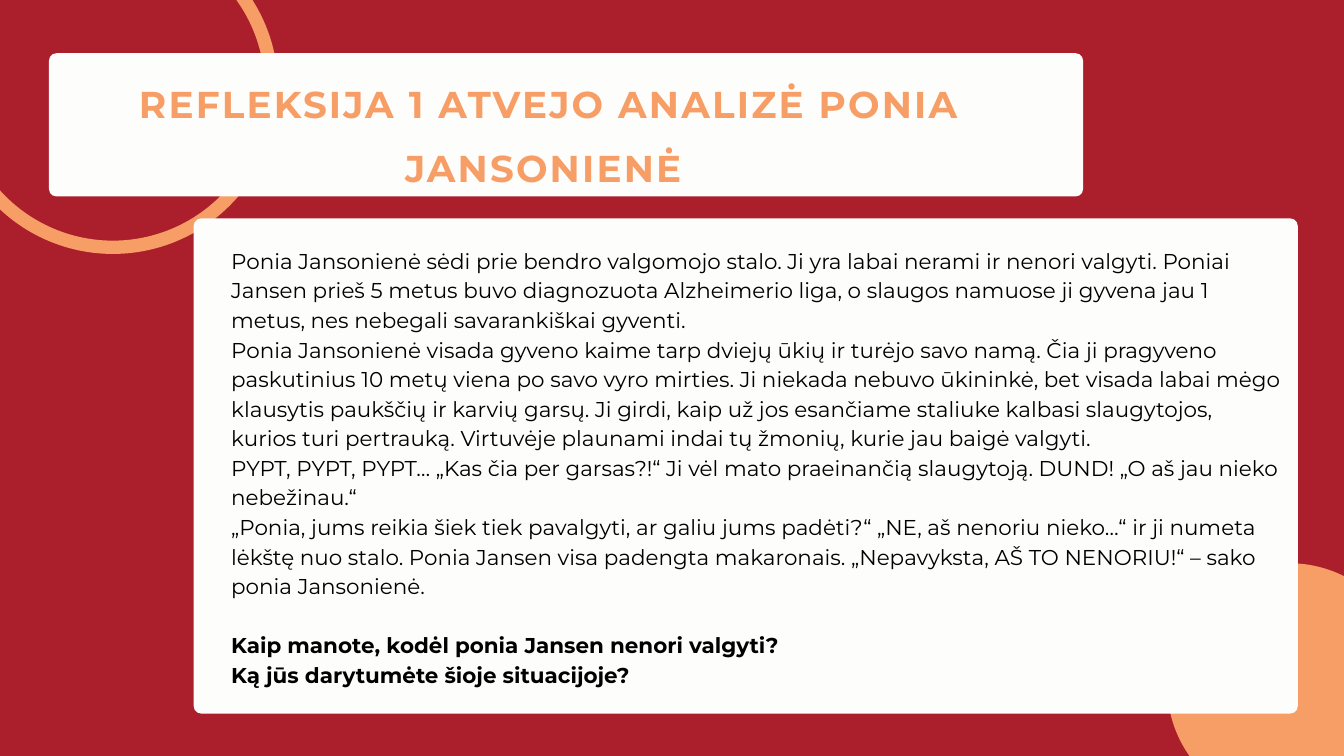
from lxml import etree
from pptx import Presentation
from pptx.dml.color import RGBColor
from pptx.enum.shapes import MSO_SHAPE as Shape
from pptx.enum.text import MSO_ANCHOR as Anchor, MSO_AUTO_SIZE as AutoSize, PP_ALIGN as Align
from pptx.oxml.ns import qn
from pptx.util import Pt

RED, ORANGE, CREAM, BLACK = "AB1F2C", "F79E67", "FDFDFB", "000000"


def paint(target, color):
    if hasattr(target, "solid"):
        target.solid()
        target = target.fore_color
    target.rgb = RGBColor.from_string(color)


class SlideBuilder:
    font = "Montserrat"

    def __init__(self, slide, background):
        self.slide = slide
        paint(slide.background.fill, background)

    def shape(self, kind, box, fill=None):
        shape = self.slide.shapes.add_shape(kind, *map(Pt, box))
        shape.shadow.inherit = False
        if fill:
            paint(shape.fill, fill)
        else:
            shape.fill.background()
        shape.line.fill.background()
        return shape

    def disc(self, box, color):
        self.shape(Shape.OVAL, box, color)

    def ring(self, box, color, width):
        ring = self.shape(Shape.OVAL, box)
        paint(ring.line.fill, color)
        ring.line.width = Pt(width)

    def card(self, box, color, radius=8):
        card = self.shape(Shape.ROUNDED_RECTANGLE, box, color)
        card.adjustments[0] = radius / min(box[2:])

    def frame(self, placeholder, box):
        self.slide.shapes._spTree.append(placeholder._element)
        placeholder.left, placeholder.top, placeholder.width, placeholder.height = map(Pt, box)
        frame = placeholder.text_frame
        frame.margin_left = frame.margin_right = frame.margin_top = frame.margin_bottom = 0
        frame.word_wrap = True
        frame.auto_size = AutoSize.NONE
        frame.vertical_anchor = Anchor.TOP
        return frame

    def add_text(self, paragraph, text, size, color, leading, bold=False,
                 align=Align.LEFT, before=0, spacing=0):
        properties = paragraph._p.get_or_add_pPr()
        properties.set("marL", "0")
        properties.set("indent", "0")
        etree.SubElement(properties, qn("a:buNone"))
        paragraph.alignment = align
        paragraph.line_spacing = Pt(leading)
        paragraph.space_before = Pt(before)
        run = paragraph.add_run()
        run.text = text
        run.font.name = self.font
        run.font.size = Pt(size)
        run.font.bold = bold
        paint(run.font.color, color)
        if spacing:
            run._r.get_or_add_rPr().set("spc", str(round(spacing * 100)))

    def title(self, text, box):
        frame = self.frame(self.slide.shapes.title, box)
        self.add_text(frame.paragraphs[0], text, 40, ORANGE, 68, True, Align.CENTER, spacing=2.4)

    def body(self, story, questions, box, leading=31.7):
        frame = self.frame(self.slide.placeholders[1], box)
        for index, text in enumerate(story + questions):
            paragraph = frame.add_paragraph() if index else frame.paragraphs[0]
            self.add_text(paragraph, text, 23, BLACK, leading, bold=index >= len(story),
                          before=leading if index == len(story) else 0)


STORY = [
    "Ponia Jansonienė sėdi prie bendro valgomojo stalo. Ji yra labai nerami ir nenori valgyti. "
    "Poniai Jansen prieš 5 metus buvo diagnozuota Alzheimerio liga, o slaugos namuose ji gyvena "
    "jau 1 metus, nes nebegali savarankiškai gyventi.",
    "Ponia Jansonienė visada gyveno kaime tarp dviejų ūkių ir turėjo savo namą. Čia ji pragyveno "
    "paskutinius 10 metų viena po savo vyro mirties. Ji niekada nebuvo ūkininkė, bet visada labai "
    "mėgo klausytis paukščių ir karvių garsų. Ji girdi, kaip už jos esančiame staliuke kalbasi "
    "slaugytojos, kurios turi pertrauką. Virtuvėje plaunami indai tų žmonių, kurie jau baigė valgyti.",
    "PYPT, PYPT, PYPT… „Kas čia per garsas?!“ Ji vėl mato praeinančią slaugytoją. DUND! "
    "„O aš jau nieko nebežinau.“",
    "„Ponia, jums reikia šiek tiek pavalgyti, ar galiu jums padėti?“ „NE, aš nenoriu nieko…“ "
    "ir ji numeta lėkštę nuo stalo. Ponia Jansen visa padengta makaronais. „Nepavyksta, "
    "AŠ TO NENORIU!“ – sako ponia Jansonienė.",
]
QUESTIONS = [
    "Kaip manote, kodėl ponia Jansen nenori valgyti?",
    "Ką jūs darytumėte šioje situacijoje?",
]


def main():
    deck = Presentation()
    deck.slide_width, deck.slide_height = Pt(1440), Pt(810)
    builder = SlideBuilder(deck.slides.add_slide(deck.slide_layouts[1]), RED)
    builder.ring((-49, -75, 340, 340), ORANGE, 14.25)
    builder.disc((1250.5, 603.5, 262, 262), ORANGE)
    builder.card((207.5, 234, 1183, 530.5), CREAM)
    builder.card((52.5, 57, 1108, 153.5), CREAM)
    builder.title("REFLEKSIJA 1 ATVEJO ANALIZĖ PONIA JANSONIENĖ ", (121, 67, 936, 196.5))
    builder.body(STORY, QUESTIONS, (247.7, 261.4, 1128.3, 515))
    deck.save("out.pptx")


if __name__ == "__main__":
    main()
